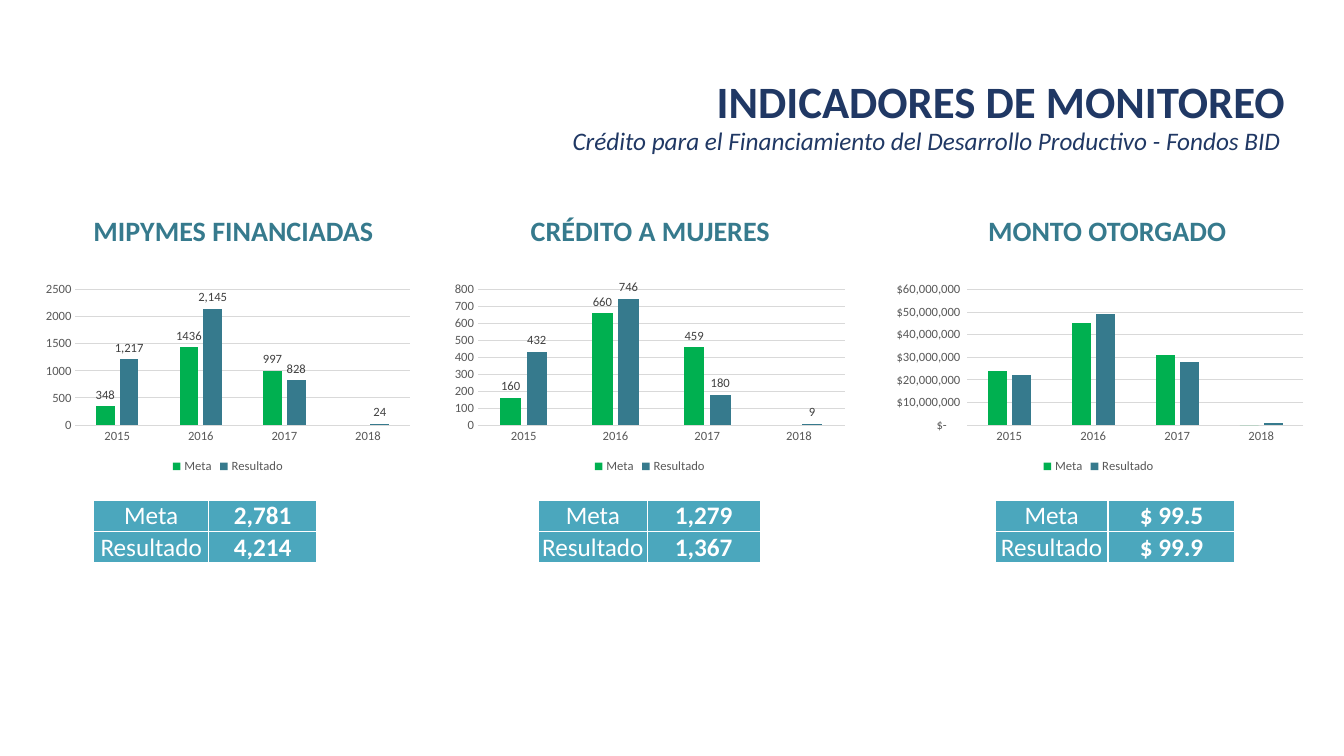
"""Build the slide of monitoring indicators: three column charts, each with a totals table."""
from lxml import etree
from pptx import Presentation
from pptx.chart.data import CategoryChartData
from pptx.dml.color import RGBColor
from pptx.enum.chart import XL_CHART_TYPE, XL_LABEL_POSITION, XL_LEGEND_POSITION, XL_TICK_MARK
from pptx.enum.text import MSO_ANCHOR, MSO_AUTO_SIZE, PP_ALIGN
from pptx.oxml.ns import qn
from pptx.util import Pt

PX = 9144
FONT = "Calibri"
NAVY = RGBColor(0x20, 0x38, 0x64)
TEAL = RGBColor(0x36, 0x7A, 0x8D)
GREEN = RGBColor(0x00, 0xB0, 0x50)
TABLE_BLUE = RGBColor(0x4B, 0xA7, 0xBD)
WHITE = RGBColor(0xFF, 0xFF, 0xFF)
BLACK = RGBColor(0x00, 0x00, 0x00)
AXIS_GRAY = RGBColor(0x59, 0x59, 0x59)
LABEL_GRAY = RGBColor(0x40, 0x40, 0x40)
LINE_GRAY = RGBColor(0xD9, 0xD9, 0xD9)
LEFT, CENTER, RIGHT = PP_ALIGN.LEFT, PP_ALIGN.CENTER, PP_ALIGN.RIGHT
TOP, MIDDLE, BOTTOM = MSO_ANCHOR.TOP, MSO_ANCHOR.MIDDLE, MSO_ANCHOR.BOTTOM
COLUMNS = XL_CHART_TYPE.COLUMN_CLUSTERED
LEGEND_BOTTOM = XL_LEGEND_POSITION.BOTTOM
OUTSIDE_END = XL_LABEL_POSITION.OUTSIDE_END
NO_TICK = XL_TICK_MARK.NONE
NO_AUTOFIT = MSO_AUTO_SIZE.NONE

YEARS = ["2015", "2016", "2017", "2018"]
SERIES = [("Meta", GREEN), ("Resultado", TEAL)]
MONEY = '_("$"* #,##0_);_("$"* \\(#,##0\\);_("$"* "-"??_);_(@_)'
INDICATORS = [
    {"heading": "MIPYMES FINANCIADAS", "heading_at": (74, 315), "chart_at": (38, 376),
     "values": [(348, 1436, 997, None), (1217, 2145, 828, 24)],
     "axis_format": "General", "label_formats": ["General", "#,##0"],
     "table_left": 93, "widths": (114, 107), "totals": ("2,781", "4,214")},
    {"heading": "CRÉDITO A MUJERES", "heading_at": (506, 278), "chart_at": (443, 403),
     "values": [(160, 660, 459, None), (432, 746, 180, 9)],
     "axis_format": "0", "label_formats": ["0", "0"],
     "table_left": 534, "widths": (108, 112), "totals": ("1,279", "1,367")},
    {"heading": "MONTO OTORGADO", "heading_at": (959, 278), "chart_at": (878, 423),
     "values": [(24000000, 45000000, 31000000, 0), (22000000, 49000000, 28000000, 1000000)],
     "axis_format": MONEY, "label_formats": [None, None],
     "table_left": 987, "widths": (112, 126), "totals": ("$ 99.5", "$ 99.9")},
]


def style_font(font, size, color, bold=False, italic=False):
    font.name, font.size, font.bold, font.italic = FONT, Pt(size), bold, italic
    font.color.rgb = color


def write_text(frame, text, size, color, align, bold=False, italic=False):
    frame.text = text
    para = frame.paragraphs[0]
    para.alignment = align
    style_font(para.runs[0].font, size, color, bold, italic)


deck = Presentation()
deck.slide_width, deck.slide_height = 1333 * PX, 750 * PX
page = deck.slides.add_slide(deck.slide_layouts[5])

title = page.shapes.title
title.left, title.top, title.width, title.height = 135 * PX, 67 * PX, 1150 * PX, 72 * PX
write_text(title.text_frame, "INDICADORES DE MONITOREO", 32, NAVY, RIGHT, bold=True)
title.text_frame.auto_size = NO_AUTOFIT
title.text_frame.vertical_anchor = MIDDLE
title.text_frame.paragraphs[0].line_spacing = 0.9

subtitle = page.shapes.add_textbox(558 * PX, 119 * PX, 775 * PX, 40 * PX)
subtitle.text_frame.word_wrap = True
write_text(subtitle.text_frame,
           "Crédito para el Financiamiento del Desarrollo Productivo - Fondos BID",
           18, NAVY, LEFT, italic=True)

for indicator in INDICATORS:
    left, width = indicator["heading_at"]
    heading = page.shapes.add_textbox(left * PX, 207 * PX, width * PX, 44 * PX)
    heading.text_frame.word_wrap = True
    write_text(heading.text_frame, indicator["heading"], 20, TEAL, CENTER, bold=True)

    data = CategoryChartData()
    data.categories = YEARS
    for (name, color), values in zip(SERIES, indicator["values"]):
        data.add_series(name, values)
    left, width = indicator["chart_at"]
    chart = page.shapes.add_chart(COLUMNS, left * PX, 276 * PX, width * PX, 198 * PX, data).chart
    style_font(chart.font, 10, BLACK)
    chart.has_title = False
    chart.has_legend = True
    chart.legend.position = LEGEND_BOTTOM
    chart.legend.include_in_layout = False
    style_font(chart.legend.font, 9, AXIS_GRAY)
    for axis in (chart.category_axis, chart.value_axis):
        axis.major_tick_mark = axis.minor_tick_mark = NO_TICK
        style_font(axis.tick_labels.font, 9, AXIS_GRAY)
    value_axis = chart.value_axis
    value_axis.tick_labels.number_format = indicator["axis_format"]
    value_axis.tick_labels.number_format_is_linked = False
    value_axis.format.line.fill.background()
    for line in (chart.category_axis.format.line, value_axis.major_gridlines.format.line):
        line.color.rgb = LINE_GRAY
        line.width = Pt(0.75)

    plot = chart.plots[0]
    plot.gap_width, plot.overlap = 219, -27
    plot.vary_by_categories = False
    for series, (name, color), label_format in zip(plot.series, SERIES, indicator["label_formats"]):
        series.format.fill.solid()
        series.format.fill.fore_color.rgb = color
        if label_format:
            labels = series.data_labels
            labels.show_value = True
            labels.position = OUTSIDE_END
            labels.number_format = label_format
            labels.number_format_is_linked = False
            style_font(labels.font, 9, LABEL_GRAY)

    widths = indicator["widths"]
    table = page.shapes.add_table(2, 2, indicator["table_left"] * PX, 496 * PX,
                                  sum(widths) * PX, 62 * PX).table
    table.first_row = table.horz_banding = False
    for column, width in zip(table.columns, widths):
        column.width = width * PX
    for row, ((name, color), total) in enumerate(zip(SERIES, indicator["totals"])):
        table.rows[row].height = 31 * PX
        for column, text in enumerate((name, total)):
            cell = table.cell(row, column)
            cell.margin_left = cell.margin_right = cell.margin_top = PX
            cell.margin_bottom = 0
            cell.vertical_anchor = TOP if column else BOTTOM
            write_text(cell.text_frame, text, 18, WHITE, CENTER, bold=column == 1)
            cell.fill.solid()
            cell.fill.fore_color.rgb = TABLE_BLUE
            properties = cell._tc.get_or_add_tcPr()
            for position, side in enumerate(("a:lnL", "a:lnR", "a:lnT", "a:lnB")):
                border = etree.Element(qn(side), w=str(Pt(1)))
                fill = etree.SubElement(border, qn("a:solidFill"))
                etree.SubElement(fill, qn("a:srgbClr"), val=str(WHITE))
                properties.insert(position, border)

deck.save("out.pptx")
